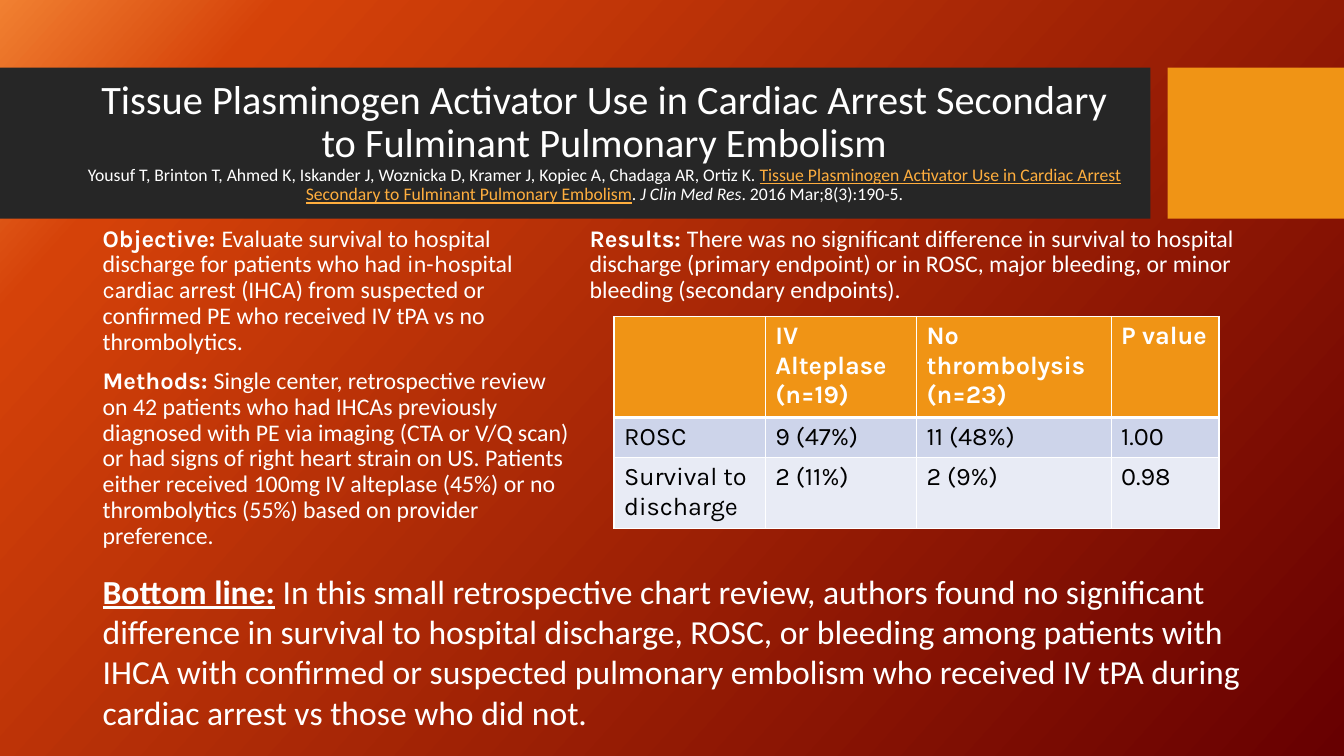
from copy import deepcopy

from lxml.etree import SubElement
from pptx import Presentation
from pptx.dml.color import RGBColor
from pptx.enum.shapes import MSO_SHAPE
from pptx.enum.text import MSO_ANCHOR, MSO_AUTO_SIZE, PP_ALIGN
from pptx.oxml.ns import qn
from pptx.util import Pt

PX = 9144
WHITE, BLACK, ORANGE, CHARCOAL, LINK = "FFFFFF", "000000", "F09415", "262626", "FFAE3E"
BODY, ACCENT = "Calibri", "Karla"


def rgb(value):
    """Turn a hex string into a colour."""
    return RGBColor.from_string(value)


def emu(*lengths):
    """Turn px lengths into EMU."""
    return [n * PX for n in lengths]


def add_run(p, text, size, name=BODY, color=WHITE, bold=False, italic=False, underline=False):
    """Add a formatted run to a paragraph."""
    r = p.add_run()
    r.text = text
    r.font.size, r.font.name = Pt(size), name
    r.font.bold, r.font.italic, r.font.underline = bold, italic, underline
    r.font.color.rgb = rgb(color)


def add_background(s):
    """Fill the slide with a diagonal gradient."""
    fill = s.background.fill
    fill.gradient()
    fill.gradient_angle = 318
    first = s.element.find(".//" + qn("a:gs"))
    first.addnext(deepcopy(first))
    stops = ((0, "F18031"), (0.14, "D54209"), (1, "670001"))
    for stop, (position, color) in zip(fill.gradient_stops, stops):
        stop.position = position
        stop.color.rgb = rgb(color)


def add_band(s, x, y, w, h, color):
    """Add a plain filled rectangle."""
    sp = s.shapes.add_shape(MSO_SHAPE.RECTANGLE, *emu(x, y, w, h))
    sp.shadow.inherit = False
    sp.fill.solid()
    sp.fill.fore_color.rgb = rgb(color)
    sp.line.fill.background()


def add_title(s, x, y, w, h):
    """Place the title with its citation beneath, in front of the bands."""
    sp = s.shapes.title
    sp.element.getparent().append(sp.element)
    sp.left, sp.top, sp.width, sp.height = emu(x, y, w, h)
    tf = sp.text_frame
    tf.word_wrap, tf.auto_size = True, MSO_AUTO_SIZE.NONE
    tf.vertical_anchor = MSO_ANCHOR.MIDDLE
    p = tf.paragraphs[0]
    p.alignment, p.line_spacing = PP_ALIGN.CENTER, 0.9
    study = "Tissue Plasminogen Activator Use in Cardiac Arrest Secondary to Fulminant Pulmonary Embolism"
    add_run(p, study, 28.8)
    p.add_line_break()
    SubElement(sp.element.find(".//" + qn("a:br")), qn("a:rPr"), sz="2880")
    add_run(p, "Yousuf T, Brinton T, Ahmed K, Iskander J, Woznicka D, Kramer J, "
               "Kopiec A, Chadaga AR, Ortiz K. ", 12.6)
    add_run(p, study, 12.6, color=LINK, underline=True)
    add_run(p, ". ", 12.6)
    add_run(p, "J Clin Med Res", 12.6, italic=True)
    add_run(p, ". 2016 Mar;8(3):190-5.", 12.6)


def add_text(s, x, y, w, h):
    """Add an empty wrapping text box and return its frame."""
    tf = s.shapes.add_textbox(*emu(x, y, w, h)).text_frame
    tf.word_wrap = True
    return tf


def add_sections(s, x, y, w, h, sections):
    """Add paragraphs with a bold heading and (text, font) pieces."""
    tf = add_text(s, x, y, w, h)
    for i, (heading, pieces) in enumerate(sections):
        p = tf.add_paragraph() if i else tf.paragraphs[0]
        p.line_spacing = 0.9
        if i:
            p.space_before = Pt(10)
        add_run(p, heading, 17, ACCENT, bold=True)
        for text, name in pieces:
            add_run(p, text, 17, name)


def set_borders(cell, top, bottom):
    """Draw white cell borders, with top and bottom widths in points."""
    tcPr = cell._tc.get_or_add_tcPr()
    for i, (side, width) in enumerate((("L", 1), ("R", 1), ("T", top), ("B", bottom))):
        ln = SubElement(tcPr, qn("a:ln" + side), w=str(Pt(width)))
        SubElement(SubElement(ln, qn("a:solidFill")), qn("a:srgbClr"), val=WHITE)
        tcPr.insert(i, ln)


def add_results_table(s, x, y, columns, heights):
    """Add the outcome table with its top left corner at x, y."""
    rows = (
        ("", "IV Alteplase (n=19)", "No thrombolysis (n=23)", "P value"),
        ("ROSC", "9 (47%)", "11 (48%)", "1.00"),
        ("Survival to discharge", "2 (11%)", "2 (9%)", "0.98"),
    )
    fills = (ORANGE, "CDD4EA", "E8EBF5")
    box = emu(x, y, sum(columns), sum(heights))
    table = s.shapes.add_table(len(rows), len(columns), *box).table
    for column, width in zip(table.columns, emu(*columns)):
        column.width = width
    for i, (row, height) in enumerate(zip(table.rows, emu(*heights))):
        row.height = height
        for cell, text in zip(row.cells, rows[i]):
            cell.fill.solid()
            cell.fill.fore_color.rgb = rgb(fills[i])
            set_borders(cell, 3 if i == 1 else 1, 1 if i else 3)
            if text:
                add_run(cell.text_frame.paragraphs[0], text, 18, ACCENT,
                        BLACK if i else WHITE, bold=i == 0)


def add_bottom_line(s, x, y, w, h):
    """Add the concluding statement."""
    p = add_text(s, x, y, w, h).paragraphs[0]
    add_run(p, "Bottom line:", 24, bold=True, underline=True)
    add_run(p, " ", 24, bold=True)
    add_run(p, "In this small retrospective chart review, authors found no significant difference in "
               "survival to hospital discharge, ROSC, or bleeding among patients with IHCA with "
               "confirmed or suspected pulmonary embolism who received IV tPA during cardiac arrest "
               "vs those who did not.", 24)


def main():
    """Build the study summary slide."""
    prs = Presentation()
    prs.slide_width, prs.slide_height = emu(1333, 750)
    s = prs.slides.add_slide(prs.slide_layouts[5])
    add_background(s)
    add_band(s, 0, 67, 1141, 150, CHARCOAL)
    add_band(s, 1158, 67, 175, 150, ORANGE)
    add_title(s, 74, 82, 1051, 118)
    add_sections(s, 92, 220, 484, 363, (
        ("Objective: ", (
            ("Evaluate survival to hospital discharge for patients who had ", BODY),
            ("i", ACCENT), ("n-", BODY), ("h", ACCENT), ("ospital ", BODY), ("c", ACCENT),
            ("ardiac arrest (IHCA) from suspected or confirmed PE who received IV tPA "
             "vs no thrombolytics.", BODY))),
        ("Methods: ", (
            ("Single center, retrospective review on 42 patients who had IHCAs previously diagnosed "
             "with PE via imaging (CTA or V/Q scan) or had signs of right heart strain on US. "
             "Patients either received 100mg IV alteplase (45%) or no thrombolytics (55%) based on "
             "provider preference.", BODY),)),
    ))
    add_sections(s, 575, 220, 666, 363, (
        ("Results: ", (
            ("There was no significant difference in survival to hospital discharge (primary "
             "endpoint) or in ROSC, major bleeding, or minor bleeding (secondary endpoints).", BODY),)),
    ))
    add_results_table(s, 609, 314, (150, 150, 193, 107), (46, 34, 34))
    add_bottom_line(s, 92, 561, 1150, 172)
    prs.save("out.pptx")


if __name__ == "__main__":
    main()
